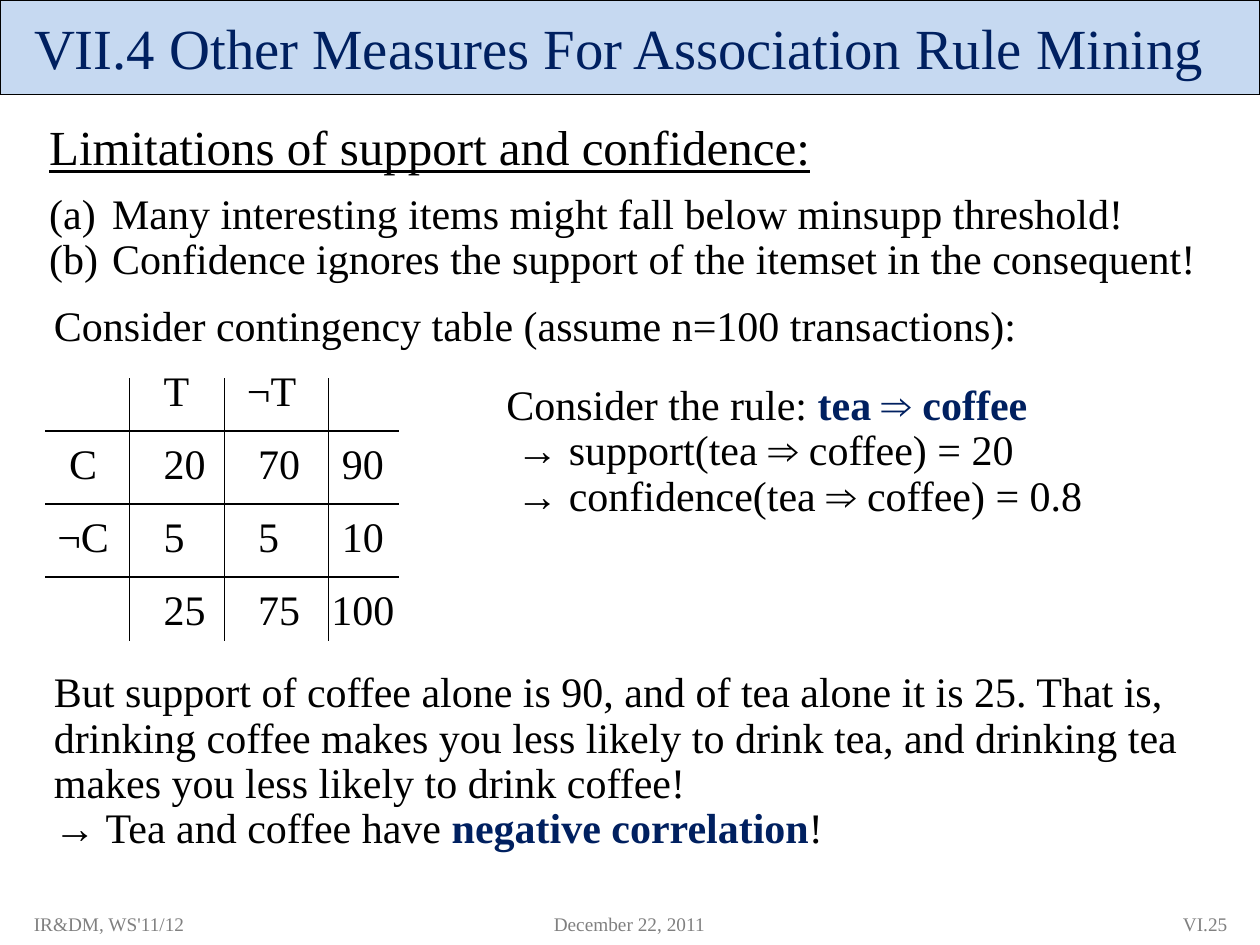
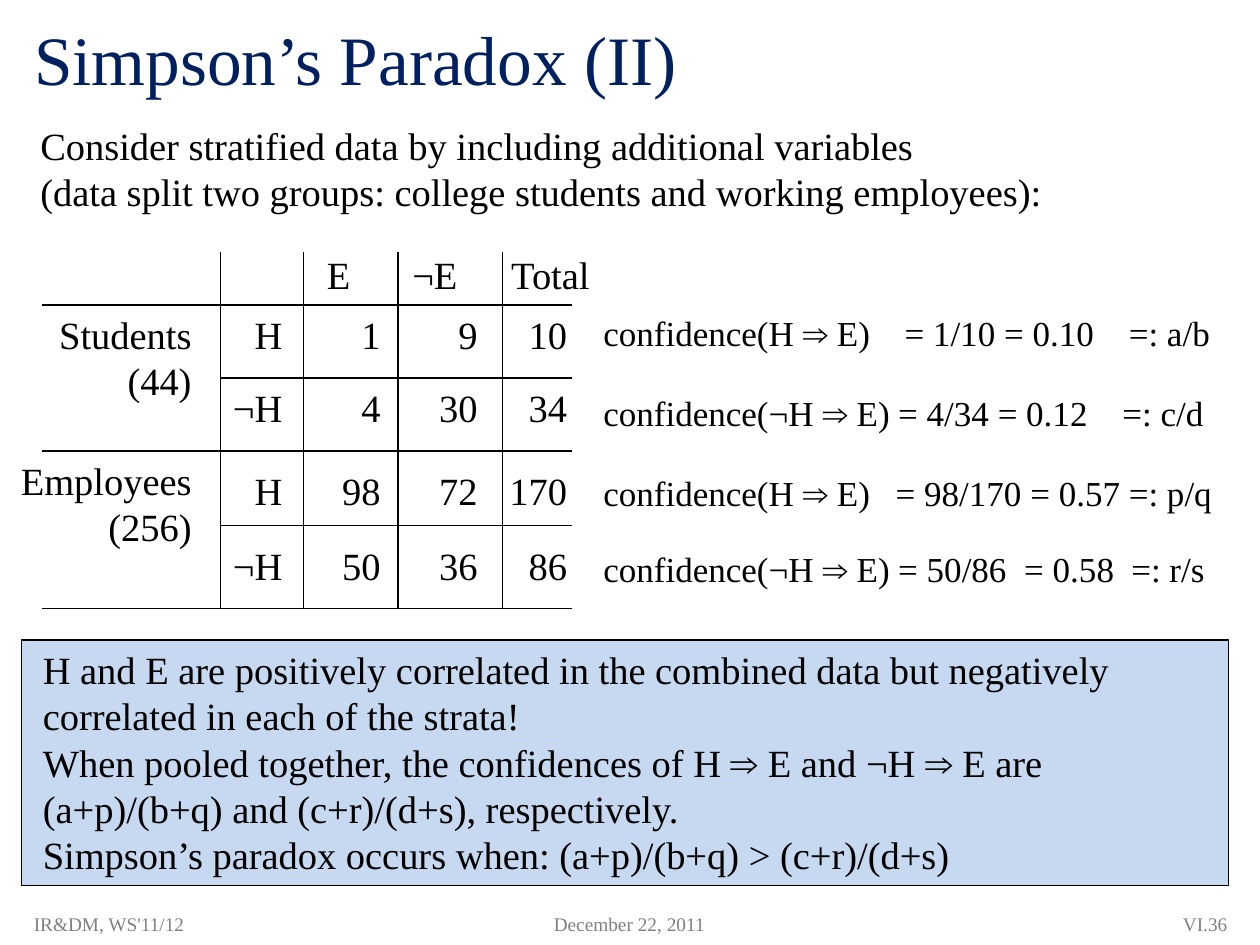
from lxml import etree
from pptx import Presentation
from pptx import util as u
from pptx.dml import color
from pptx.enum import shapes, text
from pptx.oxml import ns

FONT = "Times New Roman"
BLACK, NAVY, GREY, PALE = "000000", "002060", "808080", "C6D9F1"
LEFT, CENTER, RIGHT = text.PP_ALIGN.LEFT, text.PP_ALIGN.CENTER, text.PP_ALIGN.RIGHT


def paint(fill, hex_color):
    fill.solid()
    fill.fore_color.rgb = color.RGBColor.from_string(hex_color)


def write(frame, lines, size, hex_color=BLACK, align=LEFT, spacing=1.0):
    """Fill a frame line by line; parts between bars are bold navy."""
    frame.word_wrap = True
    frame.auto_size = text.MSO_AUTO_SIZE.NONE
    for number, line in enumerate(lines):
        para = frame.paragraphs[0] if number == 0 else frame.add_paragraph()
        para.alignment, para.line_spacing = align, spacing
        para.space_before = u.Pt(0)
        parts = line.split("|")
        para.text = parts[0]
        for part in parts[1:]:
            para.add_run().text = part
        for index, span in enumerate(para.runs):
            strong = index % 2 == 1
            span.font.name, span.font.size, span.font.bold = FONT, u.Pt(size), strong
            paint(span.font.fill, NAVY if strong else hex_color)


deck = Presentation()
deck.slide_width, deck.slide_height = u.Inches(10), u.Inches(7.5)

# Titles and footers
pages = []
for title, title_size, title_top, number in [
    ("VII.4 Other Measures For Association Rule Mining", 32.4, 0, "VI.25"),
    ("Simpson’s Paradox (II)", 39.6, 0.08, "VI.36"),
]:
    page = deck.slides.add_slide(deck.slide_layouts[1])
    pages.append(page)
    box = page.shapes.title
    box.left, box.top = u.Inches(0.17), u.Inches(title_top)
    box.width, box.height = u.Inches(9.67), u.Inches(0.75)
    box.text_frame.vertical_anchor = text.MSO_ANCHOR.MIDDLE
    write(box.text_frame, [title], title_size, NAVY)
    for left, width, label, align in [
        (0.17, 3, "IR&DM, WS'11/12", LEFT),
        (3.83, 2.33, "December 22, 2011", CENTER),
        (7.67, 2.17, number, RIGHT),
    ]:
        box = page.shapes.add_textbox(
            u.Inches(left), u.Inches(7.17), u.Inches(width), u.Inches(0.33))
        box.text_frame.vertical_anchor = text.MSO_ANCHOR.MIDDLE
        write(box.text_frame, [label], 11, GREY, align)
measures, paradox = pages

# Filled boxes: title band and conclusion
filled = []
for page, left, top, width, height in [
    (measures, 0, 0, 10, 0.75), (paradox, 0.17, 5.08, 9.58, 1.95),
]:
    box = page.shapes.add_shape(
        shapes.MSO_SHAPE.RECTANGLE,
        u.Inches(left), u.Inches(top), u.Inches(width), u.Inches(height))
    box.shadow.inherit = False
    paint(box.fill, PALE)
    paint(box.line.fill, BLACK)
    box.line.width = u.Pt(0.75)
    filled.append(box)
band, conclusion = filled
measures.shapes.element.insert(2, band.element)
conclusion.text_frame.margin_left = u.Inches(0.17)
conclusion.text_frame.vertical_anchor = text.MSO_ANCHOR.TOP
write(conclusion.text_frame, [
    "H and E are positively correlated in the combined data but negatively",
    "correlated in each of the strata!",
    "When pooled together, the confidences of H ⇒ E and ¬H ⇒ E are",
    "(a+p)/(b+q) and (c+r)/(d+s), respectively.",
    "Simpson’s paradox occurs when: (a+p)/(b+q) > (c+r)/(d+s)",
], 22)

# Body placeholders
for page, left, top, width, height, size, spacing, lines in [
    (measures, 0.29, 0.93, 9.5, 1.4, 24, 0.9, [
        "Limitations of support and confidence:",
        "Many interesting items might fall below minsupp threshold!",
        "Confidence ignores the support of the itemset in the consequent!"]),
    (paradox, 0.22, 0.92, 9, 0.84, 22, 1.0, [
        "Consider stratified data by including additional variables",
        "(data split two groups: college students and working employees):"]),
]:
    body = page.placeholders[1]
    body.left, body.top = u.Inches(left), u.Inches(top)
    body.width, body.height = u.Inches(width), u.Inches(height)
    write(body.text_frame, lines, size, spacing=spacing)
    for index, para in enumerate(body.text_frame.paragraphs):
        numbered = page is measures and index > 0
        hang = u.Inches(0.5) if numbered else 0
        props = para._p.get_or_add_pPr()
        props.set("marL", str(hang))
        props.set("indent", str(-hang))
        bullet = etree.SubElement(props, ns.qn("a:buAutoNum" if numbered else "a:buNone"))
        if numbered:
            bullet.set("type", "alphaLcParenBoth")
heading, first_item = measures.placeholders[1].text_frame.paragraphs[:2]
heading.runs[0].font.size, heading.runs[0].font.underline = u.Pt(28), True
first_item.space_before = u.Pt(9.6)

# Free text
notes = []
for page, left, top, width, height, size, spacing, lines in [
    (measures, 0.33, 2.33, 9, 0.5, 24, 1.0, [
        "Consider contingency table (assume n=100 transactions):"]),
    (measures, 3.92, 3, 5.5, 1.92, 24, 0.9, [
        "Consider the rule: |tea ⇒ coffee",
        "→ support(tea ⇒ coffee) = 20",
        "→ confidence(tea ⇒ coffee) = 0.8"]),
    (measures, 0.33, 5.28, 9.6, 1.56, 24, 0.9, [
        "But support of coffee alone is 90, and of tea alone it is 25. That is,",
        "drinking coffee makes you less likely to drink tea, and drinking tea",
        "makes you less likely to drink coffee!",
        "→ Tea and coffee have |negative correlation|!"]),
    (paradox, 4.69, 2.42, 5.15, 2.66, 20, 1.0, [
        "confidence(H ⇒ E)\t= 1/10 = 0.10\t=: a/b",
        "confidence(¬H ⇒ E)\t= 4/34 = 0.12\t=: c/d",
        "confidence(H ⇒ E)\t= 98/170 = 0.57\t=: p/q",
        "confidence(¬H ⇒ E)\t= 50/86\t= 0.58\t=: r/s"]),
]:
    box = page.shapes.add_textbox(
        u.Inches(left), u.Inches(top), u.Inches(width), u.Inches(height))
    write(box.text_frame, lines, size, spacing=spacing)
    notes.append(box.text_frame)
for para in notes[1].paragraphs[1:]:
    para._p.get_or_add_pPr().set("marL", str(u.Inches(0.08)))
for para, gap, stops in zip(
    notes[3].paragraphs, (0, 21.9, 21.9, 19.2),
    [(2.39, 4.17), (2.34, 4.12), (2.32, 4.17), (2.34, 3.34, 4.19)],
):
    para.space_before = u.Pt(gap)
    tabs = etree.SubElement(para._p.get_or_add_pPr(), ns.qn("a:tabLst"))
    for stop in stops:
        etree.SubElement(tabs, ns.qn("a:tab"), pos=str(u.Inches(stop)), algn="l")

# Contingency tables: column and row edges, then side margins per column
for page, size, columns, rows, aligns, header_pads, pads, top_pads, values in [
    (measures, 24, [0.36, 1.03, 1.78, 2.61, 3.17], [2.9, 3.42, 4, 4.58, 5.09],
     [CENTER, LEFT, LEFT, CENTER], [0, 0.27, 0.18, 0], [0.07, 0.27, 0.27, 0.02],
     [0, 0.06, 0.06, 0.06], [
         ["", "T", "¬T", ""],
         ["C", "20", "70", "90"],
         ["¬C", "5", "5", "10"],
         ["", "25", "75", "100"]]),
    (paradox, 22, [0.15, 1.75, 2.41, 3.16, 3.99, 4.68], [2, 2.42, 3, 3.58, 4.17, 4.83],
     [RIGHT] * 5, [0, 0, 0.38, 0.36, 0], [0.23, 0.17, 0.14, 0.2, 0.18],
     [0, 0.06, 0.06, 0.14, 0.14], [
         ["", "", "E", "¬E", "Total"],
         ["Students\n(44)", "H", "1", "9", "10"],
         ["", "¬H", "4", "30", "34"],
         ["Employees\n(256)", "H", "98", "72", "170"],
         ["", "¬H", "50", "36", "86"]]),
]:
    table = page.shapes.add_table(
        len(values), len(aligns), u.Inches(columns[0]), u.Inches(rows[0]),
        u.Inches(columns[-1] - columns[0]), u.Inches(rows[-1] - rows[0])).table
    table.first_row = table.horz_banding = False
    for column, start, end in zip(table.columns, columns, columns[1:]):
        column.width = u.Inches(end - start)
    for row, start, end in zip(table.rows, rows, rows[1:]):
        row.height = u.Inches(end - start)
    for r, line in enumerate(values):
        for c, value in enumerate(line):
            cell = table.cell(r, c)
            pad = u.Inches((pads if r else header_pads)[c])
            cell.margin_left = pad if aligns[c] == LEFT else 0
            cell.margin_right = 0 if aligns[c] == LEFT else pad
            cell.margin_top = u.Inches(0.06 if r and c == 0 else top_pads[r])
            cell.margin_bottom = 0
            write(cell.text_frame, value.split("\n"), size, align=aligns[c], spacing=1.07)
            for side in ("lnL", "lnR", "lnT", "lnB"):
                edge = etree.SubElement(cell._tc.get_or_add_tcPr(), ns.qn("a:" + side))
                etree.SubElement(edge, ns.qn("a:noFill"))
            cell.fill.background()
    if page is paradox:
        for r in (1, 3):
            table.cell(r, 0).merge(table.cell(r + 1, 0))

# Rules of the tables: uprights share top and bottom, level rules share the right end
for page, uprights, top, bottom, levels, right in [
    (measures, [1.03, 1.78, 2.61], 3, 5.09,
     [(0.36, 3.42), (0.36, 4), (0.36, 4.58)], 3.17),
    (paradox, [1.75, 2.41, 3.16, 3.99], 2, 4.83,
     [(0.33, 2.42), (1.75, 3), (0.33, 3.58), (1.75, 4.17), (0.33, 4.83)], 4.54),
]:
    ends = [(x, top, x, bottom) for x in uprights]
    ends += [(left, y, right, y) for left, y in levels]
    for points in ends:
        rule = page.shapes.add_connector(
            shapes.MSO_CONNECTOR.STRAIGHT, *[u.Inches(point) for point in points])
        paint(rule.line.fill, BLACK)
        rule.line.width = u.Pt(0.75)
        etree.SubElement(rule.element.spPr, ns.qn("a:effectLst"))

deck.save("out.pptx")
